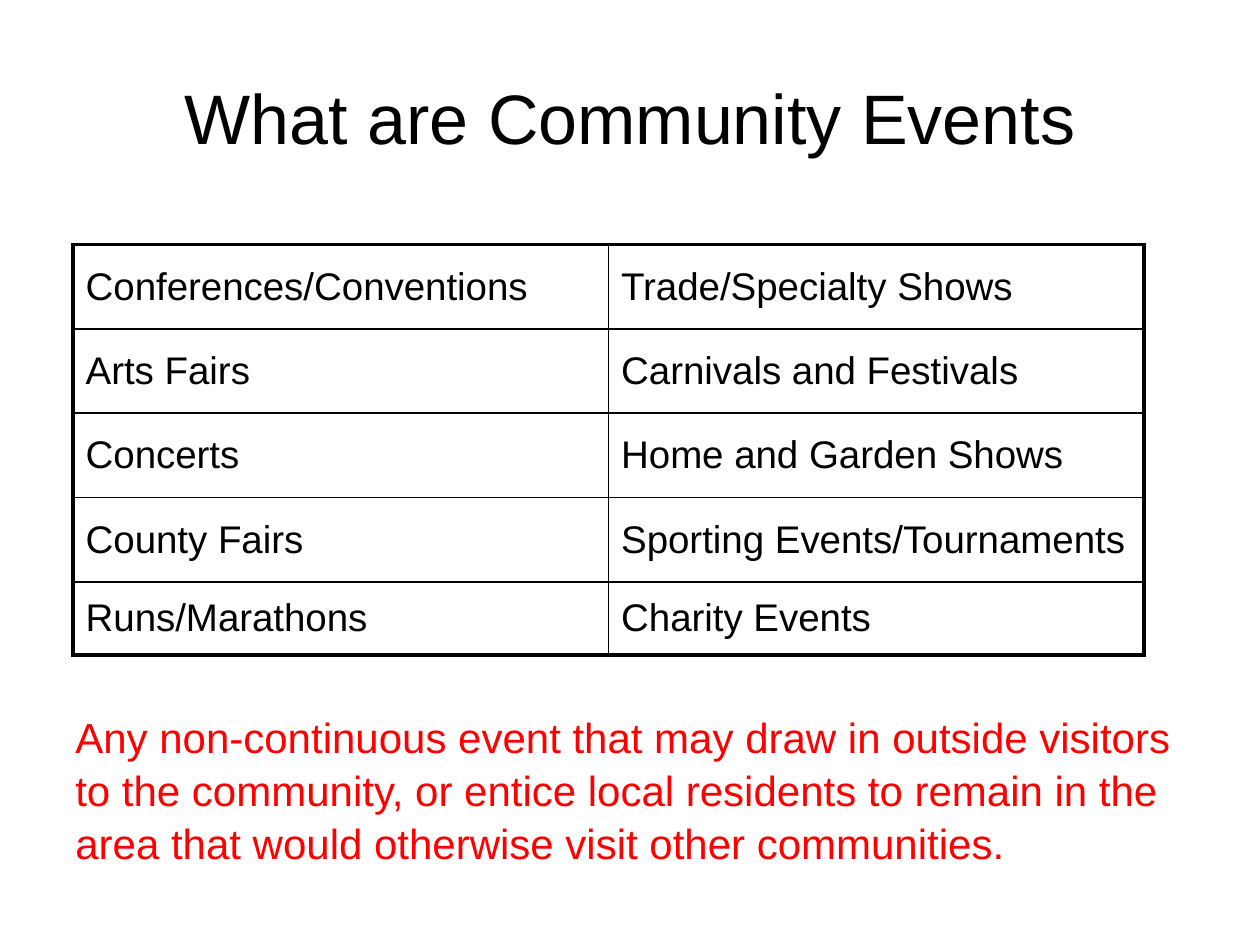
import pptx
import pptx.util
import pptx.dml.color
import pptx.enum.text
import pptx.oxml
import pptx.oxml.ns
from pptx.util import Inches

BLACK = pptx.dml.color.RGBColor(0x00, 0x00, 0x00)
RED = pptx.dml.color.RGBColor(0xFF, 0x00, 0x00)
MIDDLE = pptx.enum.text.MSO_ANCHOR.MIDDLE
CENTER = pptx.enum.text.PP_ALIGN.CENTER
LEFT = pptx.enum.text.PP_ALIGN.LEFT

EVENTS = [
    ("Conferences/Conventions", "Trade/Specialty Shows"),
    ("Arts Fairs", "Carnivals and Festivals"),
    ("Concerts", "Home and Garden Shows"),
    ("County Fairs", "Sporting Events/Tournaments"),
    ("Runs/Marathons", "Charity Events"),
]
ROW_HEIGHTS = [0.67, 0.67, 0.67, 0.67, 0.58]
COLUMN_WIDTH = 4.25
OUTER_LINE, INNER_LINE = 2.25, 1


def write(frame, text, size, color=BLACK, align=LEFT, before=0, spacing=None):
    paragraph = frame.paragraphs[0]
    paragraph.alignment = align
    paragraph.space_before = pptx.util.Pt(before)
    paragraph.line_spacing = spacing
    run = paragraph.add_run()
    run.text = text
    run.font.name = "Arial"
    run.font.size = pptx.util.Pt(size)
    run.font.color.rgb = color


def add_border(cell, side, points):
    """Draw one cell edge; side is L, R, T or B, called in that order."""
    cell._tc.get_or_add_tcPr().append(pptx.oxml.parse_xml(
        f'<a:ln{side} {pptx.oxml.ns.nsdecls("a")} w="{pptx.util.Pt(points)}">'
        f'<a:solidFill><a:srgbClr val="{BLACK}"/></a:solidFill></a:ln{side}>'))


prs = pptx.Presentation()
prs.slide_width, prs.slide_height = Inches(10), Inches(7.5)
slide = prs.slides.add_slide(prs.slide_layouts[5])

title = slide.shapes.title
title.left, title.top = Inches(0.5), Inches(0.3)
title.width, title.height = Inches(9), Inches(1.25)
title.text_frame.vertical_anchor = MIDDLE
write(title.text_frame, "What are Community Events", size=40, align=CENTER)

events_table = slide.shapes.add_table(
    len(EVENTS), 2, Inches(0.58), Inches(1.94),
    Inches(2 * COLUMN_WIDTH), Inches(sum(ROW_HEIGHTS))).table
events_table.first_row = False
events_table.horz_banding = False
for column in events_table.columns:
    column.width = Inches(COLUMN_WIDTH)

last_row = len(EVENTS) - 1
for row, (names, height) in enumerate(zip(EVENTS, ROW_HEIGHTS)):
    events_table.rows[row].height = Inches(height)
    for col, name in enumerate(names):
        cell = events_table.cell(row, col)
        cell.vertical_anchor = MIDDLE
        write(cell.text_frame, name, size=22, before=2.2)
        outer_edges = {"L": col == 0, "R": col == 1,
                       "T": row == 0, "B": row == last_row}
        for side, is_outer in outer_edges.items():
            add_border(cell, side, OUTER_LINE if is_outer else INNER_LINE)
        cell.fill.background()

definition = slide.shapes.add_textbox(
    Inches(0.5), Inches(5.58), Inches(9), Inches(1.31)).text_frame
definition.word_wrap = True
definition.auto_size = pptx.enum.text.MSO_AUTO_SIZE.SHAPE_TO_FIT_TEXT
write(definition,
      "Any non-continuous event that may draw in outside visitors to the "
      "community, or entice local residents to remain in the area that would "
      "otherwise visit other communities.",
      size=24, color=RED, before=12, spacing=1.05)

prs.save("out.pptx")
